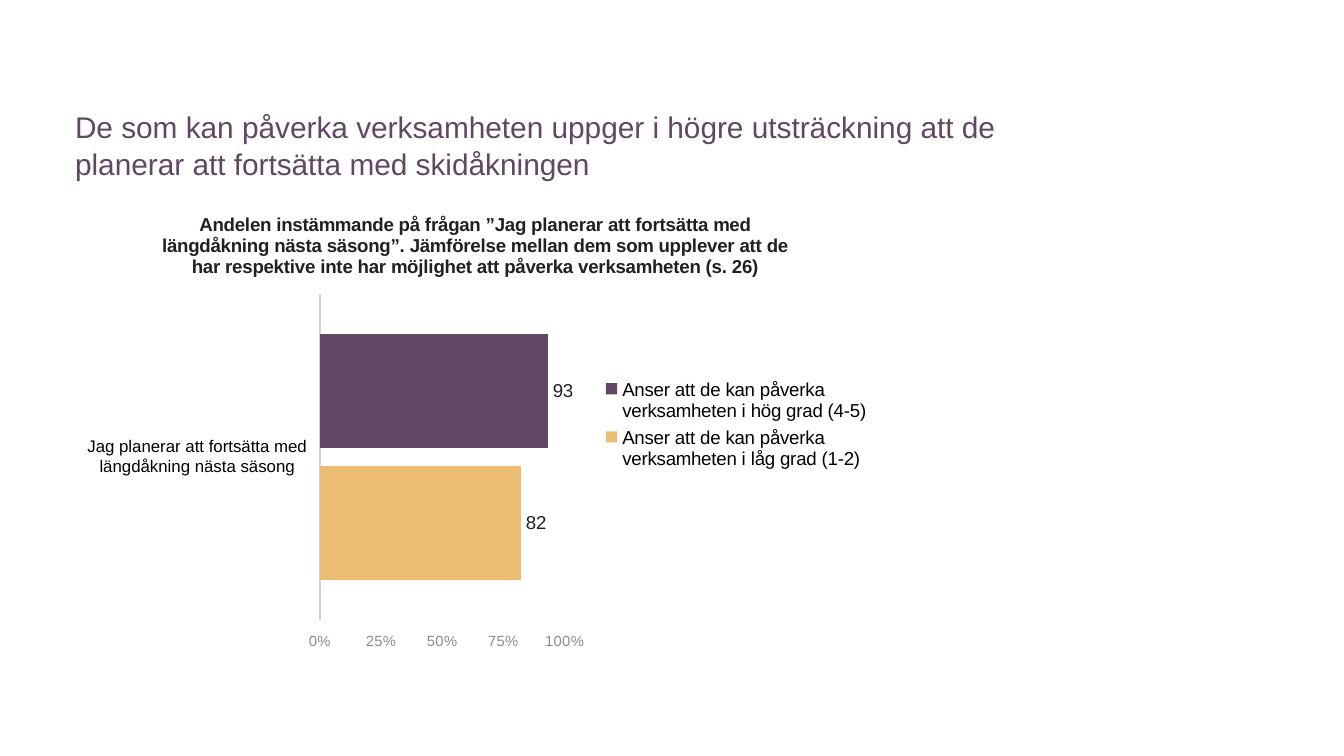
"""Build a slide comparing plans to keep skiing by perceived influence."""
from lxml import etree
from pptx import Presentation
from pptx import util as u
from pptx.chart import data as chart_data
from pptx.dml.color import RGBColor
from pptx.enum import chart as kinds, text
from pptx.oxml import ns

FONT = "Arial"
PURPLE = RGBColor(0x62, 0x47, 0x64)
SAND = RGBColor(0xEB, 0xBC, 0x71)
INK = RGBColor(0x21, 0x21, 0x21)
BLACK = RGBColor(0, 0, 0)
GREY = RGBColor(0x8C, 0x8C, 0x8C)
RULE = RGBColor(0xD1, 0xD1, 0xD1)

HEADING = (
    "De som kan påverka verksamheten uppger i högre utsträckning "
    "att de planerar att fortsätta med skidåkningen"
)
CHART_TITLE = (
    "Andelen instämmande på frågan ”Jag planerar att fortsätta med längdåkning "
    "nästa säsong”. Jämförelse mellan dem som upplever att de har respektive "
    "inte har möjlighet att påverka verksamheten (s. 26)"
)
CATEGORIES = ["Jag planerar att fortsätta med längdåkning nästa säsong"]
SERIES = [
    ("Anser att de kan påverka verksamheten i låg grad (1-2)", 82, SAND),
    ("Anser att de kan påverka verksamheten i hög grad (4-5)", 93, PURPLE),
]
HEADING_BOX = (33, 53.5, 517.5, 42)
CHART_BOX = (36, 103, 437, 249)
PLOT_AREA = (0.31, 0.22, 0.3, 0.7)
LEGEND_AREA = (0.65, 0.39, 0.34, 0.22)


def style_font(font, size, color, bold=False):
    font.name, font.size, font.bold = FONT, u.Pt(size), bold
    font.color.rgb = color


def set_layout(element, index, area, inner=False):
    for old in element.findall(ns.qn("c:layout")):
        element.remove(old)
    layout = etree.Element(ns.qn("c:layout"))
    manual = etree.SubElement(layout, ns.qn("c:manualLayout"))
    values = [("layoutTarget", "inner")] if inner else []
    values += [("xMode", "edge"), ("yMode", "edge")]
    values += zip("xywh", area)
    for name, value in values:
        etree.SubElement(manual, ns.qn(f"c:{name}")).set("val", str(value))
    element.insert(index, layout)


def add_heading(slide):
    shape = slide.shapes.title
    shape.left, shape.top, shape.width, shape.height = map(u.Pt, HEADING_BOX)
    frame = shape.text_frame
    frame.word_wrap = True
    frame.auto_size = text.MSO_AUTO_SIZE.NONE
    frame.vertical_anchor = text.MSO_ANCHOR.TOP
    paragraph = frame.paragraphs[0]
    paragraph.alignment = text.PP_ALIGN.LEFT
    paragraph.line_spacing = 1.05
    run = paragraph.add_run()
    run.text = HEADING
    style_font(run.font, 16, PURPLE)


def style_axes(chart):
    category, value = chart.category_axis, chart.value_axis
    for axis, size, color in ((category, 9, BLACK), (value, 7.9, GREY)):
        axis.has_major_gridlines = False
        axis.major_tick_mark = axis.minor_tick_mark = kinds.XL_TICK_MARK.NONE
        axis.tick_label_position = kinds.XL_TICK_LABEL_POSITION.LOW
        style_font(axis.tick_labels.font, size, color)
    category.format.line.color.rgb = RULE
    category.format.line.width = u.Pt(0.75)
    value.format.line.fill.background()
    value.minimum_scale, value.maximum_scale, value.major_unit = 0, 100, 25
    value.tick_labels.number_format = "General\\%"
    value.tick_labels.number_format_is_linked = False


def style_series(chart):
    plot = chart.plots[0]
    plot.gap_width, plot.overlap, plot.vary_by_categories = 70, -16, False
    for series, (_, _, color) in zip(plot.series, SERIES):
        series.format.fill.solid()
        series.format.fill.fore_color.rgb = color
        labels = series.data_labels
        labels.show_value = True
        labels.position = kinds.XL_LABEL_POSITION.OUTSIDE_END
        labels.number_format, labels.number_format_is_linked = "0", False
        style_font(labels.font, 10, INK)


def add_bar_chart(slide):
    data = chart_data.CategoryChartData()
    data.categories = CATEGORIES
    for name, value, _ in SERIES:
        data.add_series(name, [value])
    chart = slide.shapes.add_chart(
        kinds.XL_CHART_TYPE.BAR_CLUSTERED, *map(u.Pt, CHART_BOX), data
    ).chart
    style_font(chart.font, 10, INK)
    chart.has_title = True
    run = chart.chart_title.text_frame.paragraphs[0].add_run()
    run.text = CHART_TITLE
    style_font(run.font, 10, INK, bold=True)
    chart.has_legend = True
    legend = chart.legend
    legend.position = kinds.XL_LEGEND_POSITION.RIGHT
    legend.include_in_layout = False
    style_font(legend.font, 10, BLACK)
    style_axes(chart)
    style_series(chart)
    root = chart.element
    set_layout(root.find(".//" + ns.qn("c:plotArea")), 0, PLOT_AREA, inner=True)
    set_layout(root.find(".//" + ns.qn("c:legend")), 1, LEGEND_AREA)


def main():
    presentation = Presentation()
    presentation.slide_width, presentation.slide_height = u.Pt(720), u.Pt(405)
    slide = presentation.slides.add_slide(presentation.slide_layouts[5])
    add_bar_chart(slide)
    add_heading(slide)
    presentation.save("out.pptx")


if __name__ == "__main__":
    main()
